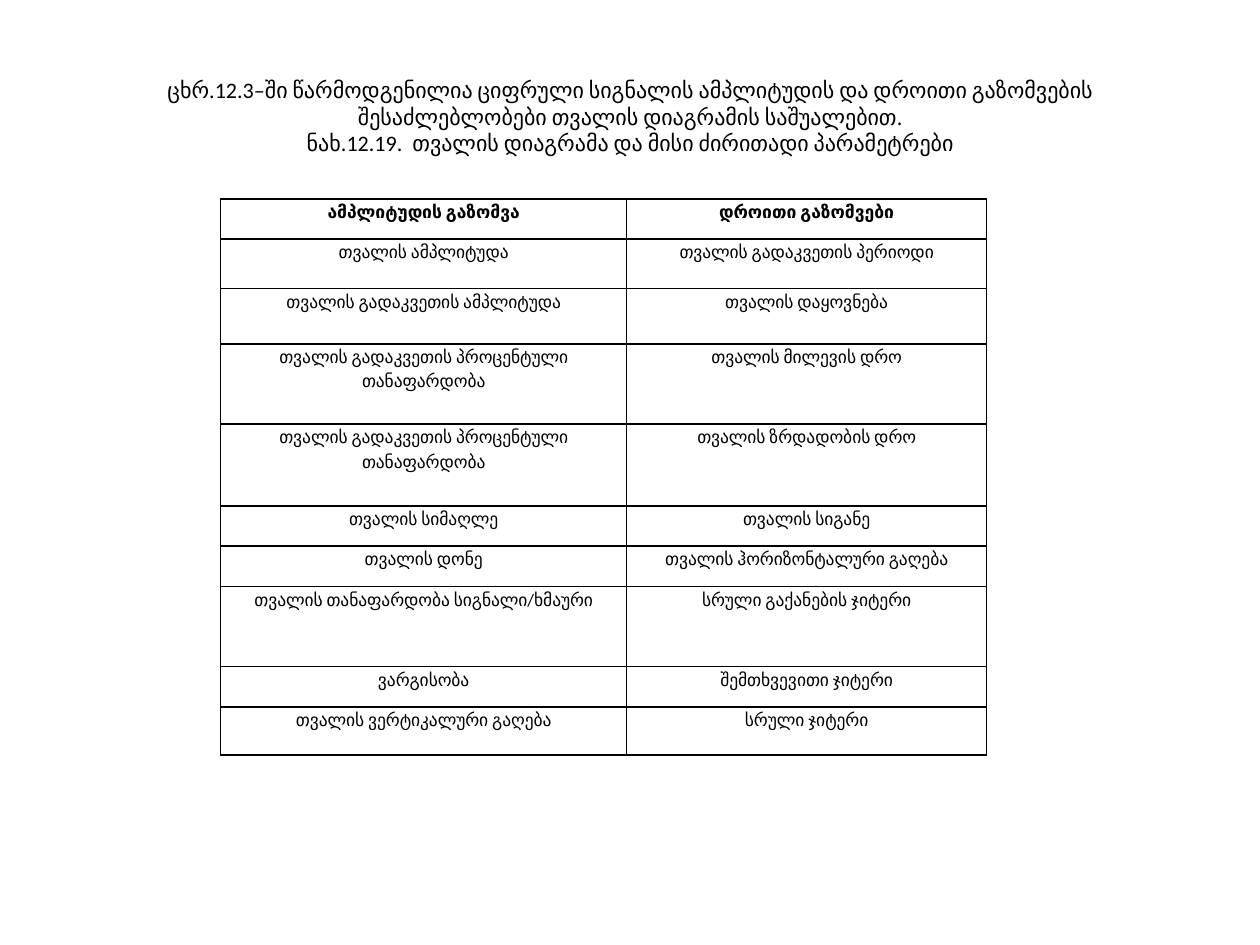
from lxml import etree
from pptx import Presentation
from pptx.dml.color import RGBColor
from pptx.enum.text import MSO_ANCHOR, MSO_AUTO_SIZE, PP_ALIGN
from pptx.oxml.ns import qn
from pptx.util import Cm, Pt

CENTER = PP_ALIGN.CENTER
MIDDLE = MSO_ANCHOR.MIDDLE
NO_AUTOFIT = MSO_AUTO_SIZE.NONE
TITLE_ONLY = 5
FONT = "Calibri"
COLORS = {"ink": "000000", "paper": "FFFFFF"}

TITLE = (
    "ცხრ.12.3–ში წარმოდგენილია ციფრული სიგნალის ამპლიტუდის და დროითი გაზომვების "
    "შესაძლებლობები თვალის დიაგრამის საშუალებით.\v"
    "ნახ.12.19.  თვალის დიაგრამა და მისი ძირითადი პარამეტრები"
)
COLUMN_WIDTHS = [8.18, 7.26]
# Row height in cm, amplitude measurement, time measurement
ROWS = [
    (0.81, "ამპლიტუდის გაზომვა", "დროითი გაზომვები"),
    (1.0, "თვალის ამპლიტუდა", "თვალის გადაკვეთის პერიოდი"),
    (1.11, "თვალის გადაკვეთის ამპლიტუდა", "თვალის დაყოვნება"),
    (1.62, "თვალის გადაკვეთის პროცენტული თანაფარდობა", "თვალის მილევის დრო"),
    (1.65, "თვალის გადაკვეთის პროცენტული თანაფარდობა", "თვალის ზრდადობის დრო"),
    (0.81, "თვალის სიმაღლე", "თვალის სიგანე"),
    (0.81, "თვალის დონე", "თვალის ჰორიზონტალური გაღება"),
    (1.62, "თვალის თანაფარდობა სიგნალი/ხმაური", "სრული გაქანების ჯიტერი"),
    (0.81, "ვარგისობა", "შემთხვევითი ჯიტერი"),
    (0.97, "თვალის ვერტიკალური გაღება", "სრული ჯიტერი"),
]


def format_runs(paragraph, size, bold=False):
    for run in paragraph.runs:
        run.font.name = FONT
        run.font.size = Pt(size)
        run.font.bold = bold
        run.font.color.rgb = RGBColor.from_string(COLORS["ink"])


def add_borders(cell):
    """Draw a 1 pt line on each side; borders must precede the cell fill."""
    properties = cell._tc.get_or_add_tcPr()
    for position, side in enumerate(("a:lnL", "a:lnR", "a:lnT", "a:lnB")):
        line = etree.Element(qn(side), w=str(Pt(1)))
        fill = etree.SubElement(line, qn("a:solidFill"))
        etree.SubElement(fill, qn("a:srgbClr"), val=COLORS["ink"])
        properties.insert(position, line)


presentation = Presentation()
presentation.slide_width = Cm(25.4)
presentation.slide_height = Cm(19.05)
slide = presentation.slides.add_slide(presentation.slide_layouts[TITLE_ONLY])

title = slide.shapes.title
title.left, title.top, title.width, title.height = Cm(1.27), Cm(0.76), Cm(22.86), Cm(3.18)
title_frame = title.text_frame
title_frame.text = TITLE
title_frame.word_wrap = True
title_frame.auto_size = NO_AUTOFIT
title_frame.vertical_anchor = MIDDLE
title_paragraph = title_frame.paragraphs[0]
title_paragraph.alignment = CENTER
format_runs(title_paragraph, 12.6)

table = slide.shapes.add_table(
    len(ROWS), len(COLUMN_WIDTHS), Cm(4.45), Cm(4.01),
    Cm(sum(COLUMN_WIDTHS)), Cm(sum(row[0] for row in ROWS)),
).table
table.first_row = False
table.horz_banding = False
for column, width in zip(table.columns, COLUMN_WIDTHS):
    column.width = Cm(width)

for row_index, (height, *texts) in enumerate(ROWS):
    table.rows[row_index].height = Cm(height)
    for column_index, text in enumerate(texts):
        cell = table.cell(row_index, column_index)
        cell.margin_left = cell.margin_right = Cm(0.18)
        cell.margin_top = cell.margin_bottom = Cm(0)
        cell.fill.solid()
        cell.fill.fore_color.rgb = RGBColor.from_string(COLORS["paper"])
        add_borders(cell)
        cell.text_frame.text = text
        paragraph = cell.text_frame.paragraphs[0]
        paragraph.alignment = CENTER
        paragraph.line_spacing = 1.15
        paragraph.space_after = Pt(10)
        format_runs(paragraph, 10, bold=row_index == 0)

presentation.save("out.pptx")
